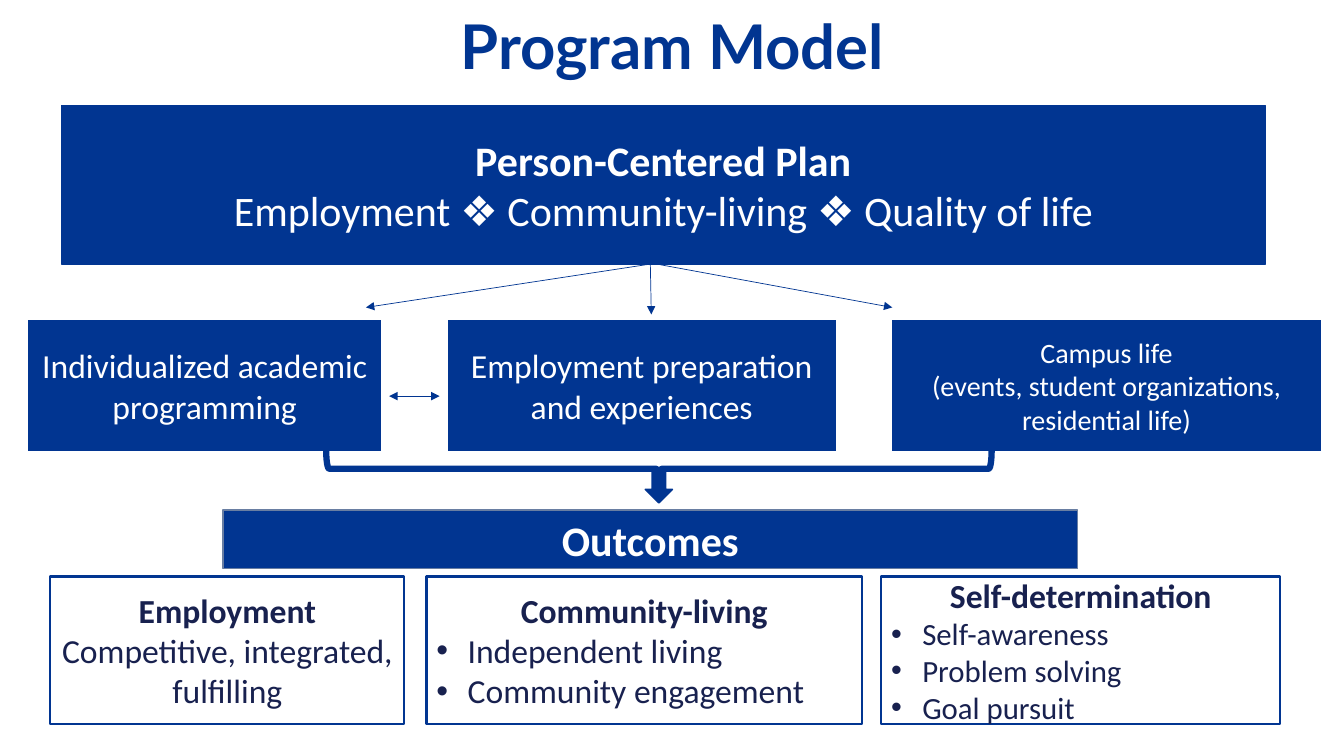
"""Builds the Program Model slide."""
from dataclasses import dataclass

from lxml import etree
from pptx import Presentation
from pptx.dml.color import RGBColor
from pptx.enum.shapes import MSO_CONNECTOR, MSO_SHAPE
from pptx.enum.text import MSO_ANCHOR, MSO_AUTO_SIZE, PP_ALIGN
from pptx.oxml.ns import qn
from pptx.util import Pt

RECT = MSO_SHAPE.RECTANGLE
BRACE = MSO_SHAPE.RIGHT_BRACE
ARROW = MSO_SHAPE.DOWN_ARROW
STRAIGHT = MSO_CONNECTOR.STRAIGHT
CENTER, LEFT = PP_ALIGN.CENTER, PP_ALIGN.LEFT
MIDDLE, BOTTOM = MSO_ANCHOR.MIDDLE, MSO_ANCHOR.BOTTOM
NO_FIT = MSO_AUTO_SIZE.NONE
PX = 9144
INDENT = 31
GEM = "❖"


@dataclass(frozen=True)
class Theme:
    blue: str = "013591"
    navy: str = "18214F"
    slate: str = "697EA2"
    white: str = "FFFFFF"
    head: str = "Lato"
    body: str = "Calibri"
    sign: str = "Arial"
    title: int = 44
    large: int = 30
    mid: int = 24
    list: int = 22
    small: int = 20


THEME = Theme()


@dataclass(frozen=True)
class Line:
    text: str
    size: int = THEME.mid
    bold: bool = False
    dot: bool = False


@dataclass(frozen=True)
class Box:
    area: tuple[int, int, int, int]
    lines: tuple[Line, ...] = ()
    fill: str | None = THEME.blue
    edge: str = THEME.blue
    ink: str = THEME.white
    width: float = 1
    kind: int = RECT
    turn: int = 0


@dataclass(frozen=True)
class Link:
    start: tuple[int, int]
    end: tuple[int, int]
    both: bool = False


def step(x: int, width: int, *lines: Line) -> Box:
    return Box((x, 316, width, 133), lines, edge=THEME.white, width=1.5)


def goal(x: int, width: int, name: str, *lines: Line) -> Box:
    return Box((x, 572, width, 146), (Line(name, bold=True), *lines),
               fill=THEME.white, ink=THEME.navy, width=1.5)


def dots(size: int, *names: str) -> list[Line]:
    return [Line(name, size, dot=True) for name in names]


BOXES = (
    Box((61, 105, 1194, 157), (
        Line("Person-Centered Plan", THEME.large, True),
        Line("Employment ❖ Community-living ❖ Quality of life", THEME.large))),
    step(27, 352, Line("Individualized academic programming")),
    step(443, 387, Line("Employment preparation and experiences")),
    step(884, 427, Line("Campus life", THEME.small),
         Line("(events, student organizations, residential life)", THEME.small)),
    Box((221, 506, 848, 58), (Line("Outcomes", THEME.large, True),), edge=THEME.slate),
    goal(50, 351, "Employment", Line("Competitive, integrated, fulfilling")),
    goal(423, 432, "Community-living",
         *dots(THEME.mid, "Independent living", "Community engagement")),
    goal(874, 396, "Self-determination",
         *dots(THEME.list, "Self-awareness", "Problem solving", "Goal pursuit")),
    Box((636, 135, 35, 660), fill=None, width=4.5, kind=BRACE, turn=90),
    Box((640, 465, 27, 34), kind=ARROW),
)

LINKS = (
    Link((386, 393), (436, 393), True),
    Link((645, 262), (363, 305)),
    Link((645, 262), (646, 312)),
    Link((646, 261), (885, 305)),
)


def tint(code: str) -> RGBColor:
    return RGBColor.from_string(code)


def style(run, face: str, size: int, bold: bool, ink: str) -> None:
    font = run.font
    font.name, font.size, font.bold = face, Pt(size), bold
    font.color.rgb = tint(ink)


def write(para, line: Line, ink: str) -> None:
    para.alignment = LEFT if line.dot else CENTER
    if line.dot:
        props = para._p.get_or_add_pPr()
        props.set("marL", str(INDENT * PX))
        props.set("indent", str(-INDENT * PX))
        etree.SubElement(props, qn("a:buFont"), typeface=THEME.sign)
        etree.SubElement(props, qn("a:buChar"), char="•")
    for part in line.text.replace(GEM, f"|{GEM}|").split("|"):
        run = para.add_run()
        run.text = part
        face = THEME.sign if part == GEM else THEME.body
        style(run, face, line.size, line.bold, ink)


def draw(slide, box: Box) -> None:
    shape = slide.shapes.add_shape(box.kind, *(PX * n for n in box.area))
    shape.shadow.inherit = False
    shape.rotation = box.turn
    if box.fill:
        shape.fill.solid()
        shape.fill.fore_color.rgb = tint(box.fill)
    else:
        shape.fill.background()
    shape.line.color.rgb = tint(box.edge)
    shape.line.width = Pt(box.width)
    frame = shape.text_frame
    frame.word_wrap = True
    frame.vertical_anchor = MIDDLE
    for i, line in enumerate(box.lines):
        para = frame.add_paragraph() if i else frame.paragraphs[0]
        write(para, line, box.ink)


def join(slide, link: Link) -> None:
    wire = slide.shapes.add_connector(
        STRAIGHT, *(PX * n for n in link.start + link.end))
    wire.line.color.rgb = tint(THEME.blue)
    wire.line.width = Pt(0.5)
    edge = wire.line._get_or_add_ln()
    for tag in ("a:headEnd", "a:tailEnd")[not link.both:]:
        etree.SubElement(edge, qn(tag), type="triangle")
    etree.SubElement(wire._element.spPr, qn("a:effectLst"))


def head(slide, text: str) -> None:
    title = slide.shapes.title
    title.left, title.top, title.width, title.height = (
        PX * n for n in (92, -8, 1150, 95))
    frame = title.text_frame
    frame.text = text
    frame.word_wrap = True
    frame.auto_size = NO_FIT
    frame.vertical_anchor = BOTTOM
    para = frame.paragraphs[0]
    para.alignment = CENTER
    para.line_spacing = 0.9
    style(para.runs[0], THEME.head, THEME.title, True, THEME.blue)


def main() -> None:
    deck = Presentation()
    deck.slide_width, deck.slide_height = 1333 * PX, 750 * PX
    slide = deck.slides.add_slide(deck.slide_layouts[5])
    head(slide, "Program Model")
    for box in BOXES:
        draw(slide, box)
    for link in LINKS:
        join(slide, link)
    deck.save("out.pptx")


if __name__ == "__main__":
    main()
